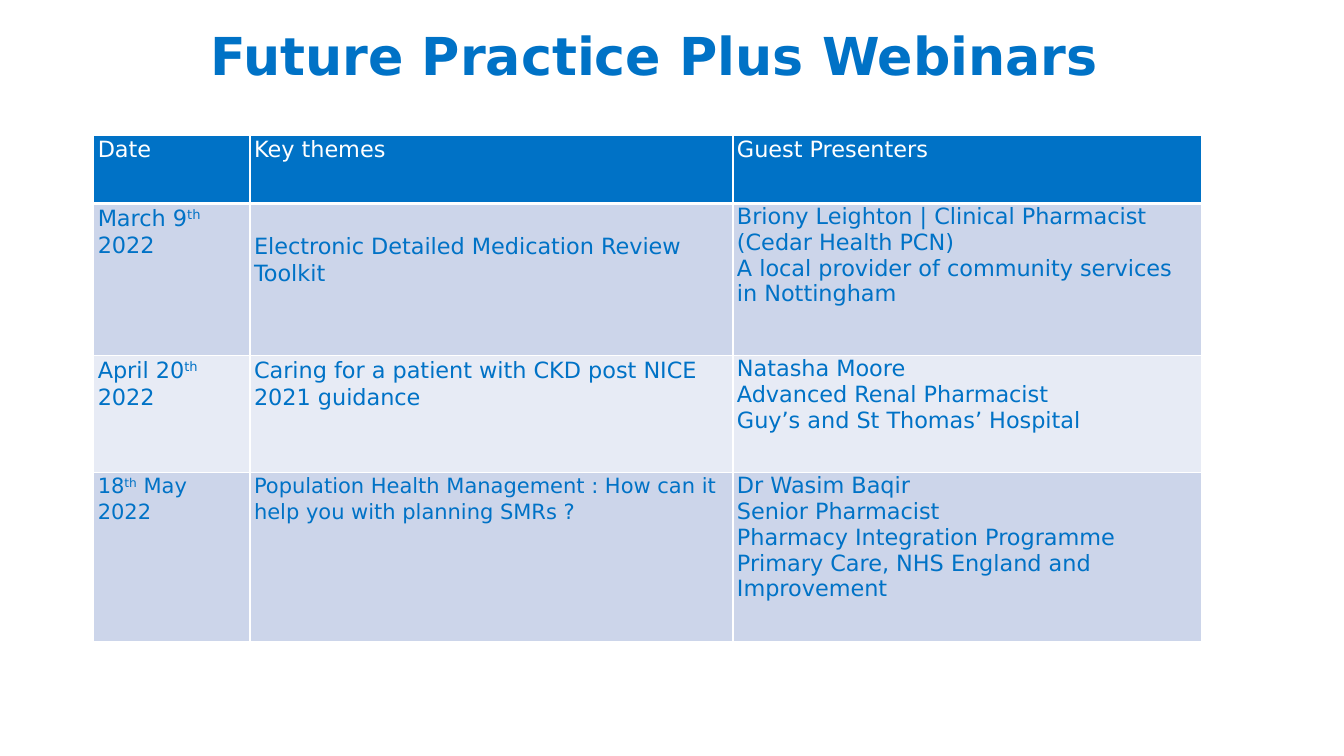
import pptx
import pptx.dml.color
import pptx.enum.text
import pptx.oxml.ns
import pptx.util
from lxml import etree

Inches, Pt = pptx.util.Inches, pptx.util.Pt
FONT = "DejaVu Sans"
BLUE, WHITE, BAND, PALE = "0072C6", "FFFFFF", "CCD5EA", "E7EBF5"

TITLE = "Future Practice Plus Webinars"
HEADERS = ["Date", "Key themes", "Guest Presenters"]
# Each date is split as text before, superscript and text after.
WEBINARS = [
    (("March 9", "th", " 2022"),
     "Electronic Detailed Medication Review Toolkit",
     ["Briony Leighton | Clinical Pharmacist (Cedar Health PCN)",
      "A local provider of community services in Nottingham"]),
    (("April 20", "th", " 2022"),
     "Caring for a patient with CKD post NICE 2021 guidance",
     ["Natasha Moore", "Advanced Renal Pharmacist",
      "Guy’s and St Thomas’ Hospital"]),
    (("18", "th", " May 2022"),
     "Population Health Management : How can it help you with planning SMRs ?",
     ["Dr Wasim Baqir", "Senior Pharmacist", "Pharmacy Integration Programme",
      "Primary Care, NHS England and Improvement"]),
]
THEME_SIZES = [16, 16, 15]
THEME_DROPS = [0.28, 0, 0]
COL_WIDTHS = [1.55, 4.79, 4.65]
ROW_HEIGHTS = [0.68, 1.51, 1.16, 1.68]


def rgb(value):
    return pptx.dml.color.RGBColor.from_string(value)


def add_run(p, text, size, color, bold=False, superscript=False):
    r = p.add_run()
    r.text = text
    for name, value in {"name": FONT, "size": Pt(size), "bold": bold}.items():
        setattr(r.font, name, value)
    r.font.color.rgb = rgb(color)
    if superscript:
        r.font._element.set("baseline", "30000")


def set_borders(cell, bottom):
    tcPr = cell._tc.get_or_add_tcPr()
    for side, width in {"L": 1, "R": 1, "T": 1, "B": bottom}.items():
        ln = etree.SubElement(tcPr, pptx.oxml.ns.qn("a:ln" + side), w=str(Pt(width)))
        fill = etree.SubElement(ln, pptx.oxml.ns.qn("a:solidFill"))
        etree.SubElement(fill, pptx.oxml.ns.qn("a:srgbClr"), val=WHITE)


def fill_cell(cell, paragraphs, fill, size=16, color=BLUE, spacing=1.07, drop=0, bottom=1):
    """Write paragraphs, each a sequence of runs whose second one is superscript."""
    margins = {"left": 0.04, "right": 0.04, "top": drop, "bottom": 0}
    for side, margin in margins.items():
        setattr(cell, "margin_" + side, Inches(margin))
    set_borders(cell, bottom)
    cell.fill.solid()
    cell.fill.fore_color.rgb = rgb(fill)
    tf = cell.text_frame
    for i, runs in enumerate(paragraphs):
        p = tf.add_paragraph() if i else tf.paragraphs[0]
        p.line_spacing = spacing
        for j, text in enumerate(runs):
            add_run(p, text, size, color, superscript=j == 1)


def add_title(s):
    tf = s.shapes.add_textbox(Inches(0.93), Inches(0.15), Inches(11.12), Inches(0.76)).text_frame
    tf.word_wrap = True
    tf.vertical_anchor = pptx.enum.text.MSO_ANCHOR.BOTTOM
    p = tf.paragraphs[0]
    p.alignment = pptx.enum.text.PP_ALIGN.CENTER
    p.line_spacing = 0.9
    add_run(p, TITLE, 37.3, BLUE, bold=True)


def add_webinar_table(s):
    table = s.shapes.add_table(
        len(ROW_HEIGHTS), len(COL_WIDTHS), Inches(0.93), Inches(1.34),
        Inches(sum(COL_WIDTHS)), Inches(sum(ROW_HEIGHTS))).table
    table.first_row = table.horz_banding = False
    for column, width in zip(table.columns, COL_WIDTHS):
        column.width = Inches(width)
    for row, height in zip(table.rows, ROW_HEIGHTS):
        row.height = Inches(height)

    for col, header in enumerate(HEADERS):
        fill_cell(table.cell(0, col), [[header]], BLUE, color=WHITE, bottom=3)
    for i, (date, theme, presenter) in enumerate(WEBINARS):
        date_cell, theme_cell, presenter_cell = table.rows[i + 1].cells
        fill = PALE if i % 2 else BAND
        size = THEME_SIZES[i]
        fill_cell(date_cell, [date], fill, size)
        fill_cell(theme_cell, [[theme]], fill, size, drop=THEME_DROPS[i])
        fill_cell(presenter_cell, [[line] for line in presenter], fill, spacing=1.0)


def main():
    prs = pptx.Presentation()
    prs.slide_width, prs.slide_height = Inches(13.33), Inches(7.5)
    s = prs.slides.add_slide(prs.slide_layouts[6])
    add_title(s)
    add_webinar_table(s)
    prs.save("out.pptx")


if __name__ == "__main__":
    main()
